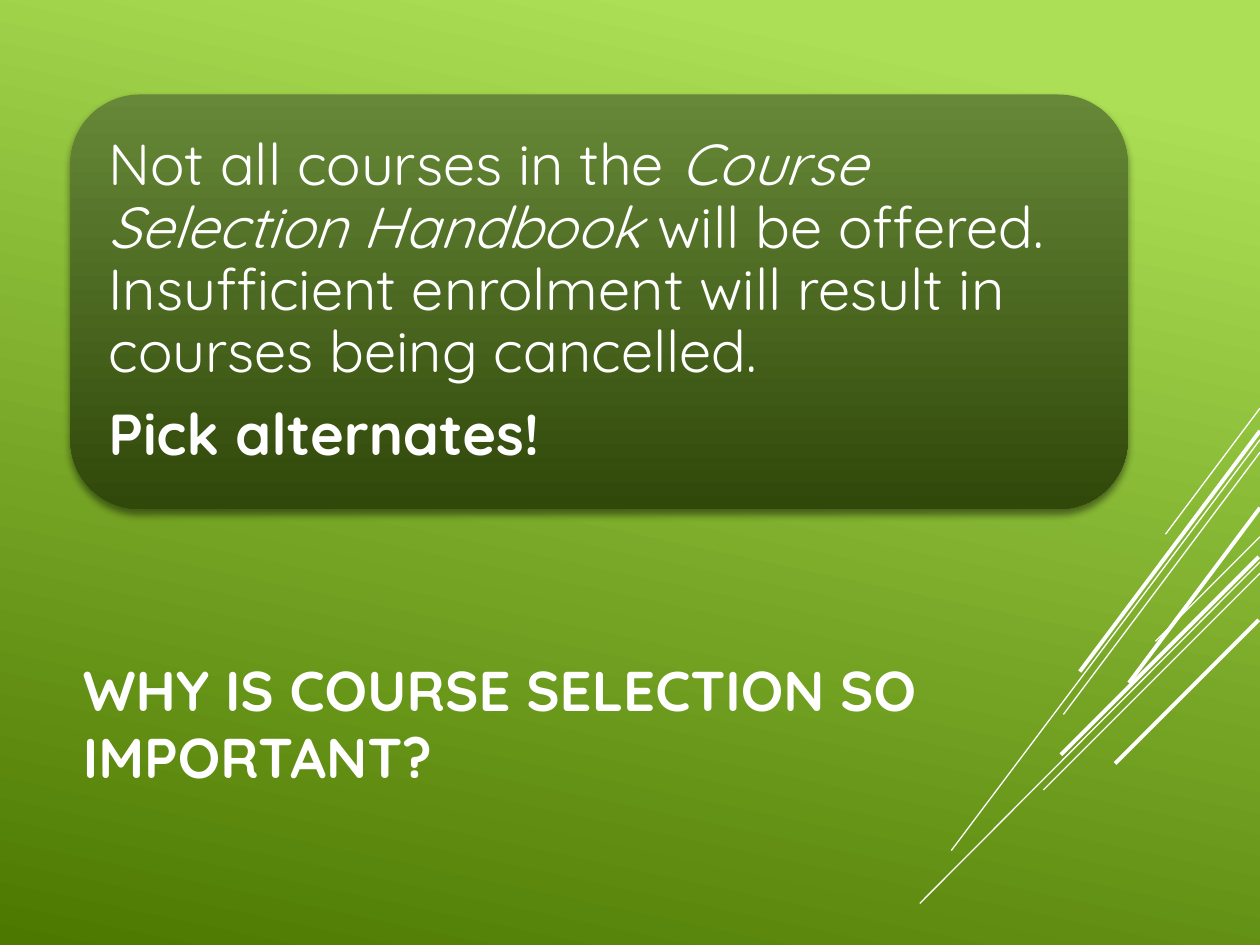
from lxml.etree import SubElement
from pptx import Presentation
from pptx.dml.color import RGBColor
from pptx.enum.shapes import MSO_CONNECTOR, MSO_SHAPE
from pptx.enum.text import MSO_ANCHOR
from pptx.oxml import parse_xml
from pptx.oxml.ns import nsdecls, qn
from pptx.util import Inches, Pt

COLORS = {
    "white": "FFFFFF",
    "lime": "ACDF55",
    "leaf": "4C7800",
    "panel_top": "678838",
    "panel_bottom": "304809",
    "shadow": "000000",
}
FONT = "Quicksand"
SLIDE_WIDTH, SLIDE_HEIGHT = 10, 7.5
THIN, THICK = 0.75, 2.25

# Each paragraph is a list of (text, style) runs.
TITLE = [[("WHY IS COURSE SELECTION SO IMPORTANT?", "bold")]]
MESSAGE = [
    [
        ("Not all courses in the ", "plain"),
        ("Course Selection Handbook", "italic"),
        (" will be offered. Insufficient enrolment will result in "
         "courses being cancelled.", "plain"),
    ],
    [("Pick alternates!", "bold")],
]

# Rays: start x, start y, end x, end y, weight
SHALLOW_RAYS = [
    (10, 4.26, 9.17, 5.09, THIN),
    (10, 4.46, 7.3, 7.17, THIN),
    (10, 4.55, 8.28, 6.27, THIN),
    (9.99, 4.42, 8.42, 5.99, THICK),
    (9.99, 4.92, 8.85, 6.06, THICK),
]
STEEP_RAYS = [
    (10, 3.24, 9.25, 4.24, THIN),
    (10, 3.49, 7.55, 6.75, THIN),
    (10, 3.59, 8.44, 5.67, THIN),
    (10, 3.42, 8.57, 5.33, THICK),
    (10, 4.03, 8.96, 5.42, THICK),
]

PANEL = (0.56, 0.75, 8.39, 3.29)
PANEL_PADDING = 0.16
TITLE_BOX = (0.56, 4.91, 7, 1.65)


def color(name):
    return RGBColor.from_string(COLORS[name])


def apply_gradient(fill, stops, clockwise_angle):
    fill.gradient()
    fill.gradient_angle = 360 - clockwise_angle
    for stop, (position, name) in zip(fill.gradient_stops, stops):
        stop.position = position
        stop.color.rgb = color(name)


def add_rays(slide, rays):
    for *ends, weight in rays:
        ray = slide.shapes.add_connector(
            MSO_CONNECTOR.STRAIGHT, *(Inches(value) for value in ends))
        ray.line.color.rgb = color("white")
        ray.line.width = Pt(weight)
        SubElement(ray._element.spPr, qn("a:effectLst"))


def add_panel(slide):
    panel = slide.shapes.add_shape(
        MSO_SHAPE.ROUNDED_RECTANGLE, *(Inches(value) for value in PANEL))
    apply_gradient(panel.fill, [(0, "panel_top"), (1, "panel_bottom")], 90)
    panel.line.fill.background()
    panel._element.spPr.append(parse_xml(
        f'<a:effectLst {nsdecls("a")}>'
        f'<a:outerShdw blurRad="{Pt(4)}" dist="{Pt(3)}" dir="5400000" rotWithShape="0">'
        f'<a:srgbClr val="{COLORS["shadow"]}"><a:alpha val="46000"/></a:srgbClr>'
        '</a:outerShdw></a:effectLst>'))


def add_text(slide, box, paragraphs, size, inset=(0.1, 0.05),
             line_spacing=None, space_after=None):
    frame = slide.shapes.add_textbox(*(Inches(value) for value in box)).text_frame
    frame.word_wrap = True
    frame.vertical_anchor = MSO_ANCHOR.MIDDLE
    frame.margin_left = frame.margin_right = Inches(inset[0])
    frame.margin_top = frame.margin_bottom = Inches(inset[1])
    for index, runs in enumerate(paragraphs):
        paragraph = frame.add_paragraph() if index else frame.paragraphs[0]
        paragraph.line_spacing = line_spacing
        if space_after:
            paragraph.space_after = Pt(space_after)
        for text, style in runs:
            run = paragraph.add_run()
            run.text = text
            run.font.name = FONT
            run.font.size = Pt(size)
            run.font.color.rgb = color("white")
            run.font.bold = style == "bold"
            run.font.italic = style == "italic"


def main():
    presentation = Presentation()
    presentation.slide_width = Inches(SLIDE_WIDTH)
    presentation.slide_height = Inches(SLIDE_HEIGHT)
    slide = presentation.slides.add_slide(presentation.slide_layouts[6])
    apply_gradient(slide.background.fill, [(0.1, "lime"), (1, "leaf")], 102)

    add_rays(slide, SHALLOW_RAYS)
    add_text(slide, TITLE_BOX, TITLE, size=32)
    add_rays(slide, STEEP_RAYS)
    add_panel(slide)
    left, top, width, height = PANEL
    message_box = (left + PANEL_PADDING, top + PANEL_PADDING,
                   width - 2 * PANEL_PADDING, height - 2 * PANEL_PADDING)
    add_text(slide, message_box, MESSAGE, size=33, inset=(0.14, 0.14),
             line_spacing=0.9, space_after=11.5)
    presentation.save("out.pptx")


if __name__ == "__main__":
    main()
